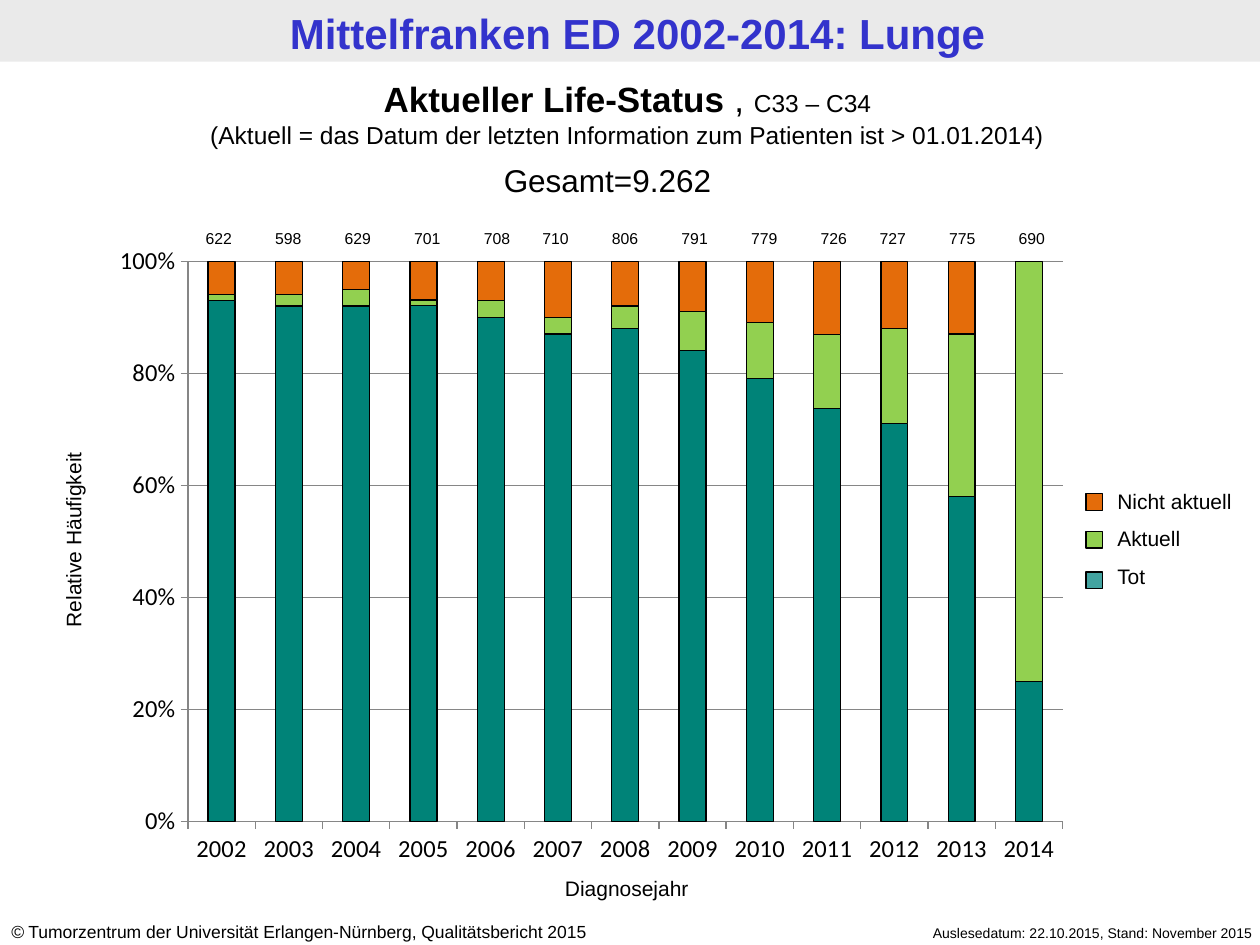
"""Builds the slide on the current life status of lung cancer patients by diagnosis year."""
from lxml import etree
from pptx import Presentation
from pptx.chart.data import CategoryChartData
from pptx.dml.color import RGBColor
from pptx.enum.chart import XL_CHART_TYPE, XL_TICK_MARK
from pptx.enum.shapes import MSO_SHAPE
from pptx.enum.text import MSO_ANCHOR, PP_ALIGN
from pptx.oxml import parse_xml
from pptx.oxml.ns import nsdecls, qn
from pptx.util import Pt

BLACK = RGBColor(0x00, 0x00, 0x00)
BAND_GREY = RGBColor(0xEA, 0xEA, 0xEA)
LINE_GREY = RGBColor(0x86, 0x86, 0x86)
TITLE_BLUE = RGBColor(0x33, 0x33, 0xCC)
ORANGE = RGBColor(0xE4, 0x6C, 0x0A)
GREEN = RGBColor(0x92, 0xD0, 0x50)
TEAL = RGBColor(0x00, 0x83, 0x78)
LEGEND_TEAL = RGBColor(0x00, 0x83, 0x80)

prs = Presentation()
prs.slide_width, prs.slide_height = Pt(720), Pt(540)
slide = prs.slides.add_slide(prs.slide_layouts[5])


def add_text(left, top, width, height, paragraphs, size, align=PP_ALIGN.LEFT, gap=0):
    box = slide.shapes.add_textbox(Pt(left), Pt(top), Pt(width), Pt(height))
    frame = box.text_frame
    frame.word_wrap = True
    for index, text in enumerate(paragraphs):
        paragraph = frame.paragraphs[0] if index == 0 else frame.add_paragraph()
        paragraph.text = text
        paragraph.alignment = align
        if index and gap:
            paragraph.space_before = Pt(gap)
        paragraph.font.name = "Arial"
        paragraph.font.size = Pt(size)
        paragraph.font.color.rgb = BLACK
    return box


def add_box(left, top, width, height, color):
    box = slide.shapes.add_shape(MSO_SHAPE.RECTANGLE, Pt(left), Pt(top), Pt(width), Pt(height))
    box.shadow.inherit = False
    box.fill.solid()
    box.fill.fore_color.rgb = color
    return box


band = add_box(0, 0, 720, 35.3, BAND_GREY)
band.line.fill.background()
slide.shapes._spTree.insert(2, band._element)

title = slide.shapes.title
title.left, title.top, title.width, title.height = Pt(4.3), Pt(1), Pt(720), Pt(35.3)
title.text_frame.text = "Mittelfranken ED 2002-2014: Lunge"
title.text_frame.vertical_anchor = MSO_ANCHOR.TOP
title.text_frame.margin_top = title.text_frame.margin_bottom = Pt(3)
heading = title.text_frame.paragraphs[0]
heading.alignment = PP_ALIGN.CENTER
heading.font.name = "Arial"
heading.font.size = Pt(24)
heading.font.bold = True
heading.font.color.rgb = TITLE_BLUE

add_text(478.8, 524.9, 244.1, 17.3, ["Auslesedatum: 22.10.2015, Stand: November 2015"], 8, PP_ALIGN.RIGHT)
copyright_note = add_text(-0.7, 522.7, 377.3, 19.4, ["©"], 10).text_frame.paragraphs[0]
copyright_note.runs[0].font.italic = True
copyright_note.add_run().text = " Tumorzentrum der Universität Erlangen-Nürnberg, Qualitätsbericht 2015"

status = CategoryChartData(number_format="0")
status.categories = [str(year) for year in range(2002, 2015)]
status.add_series("Tot", [93, 92, 92, 93, 90, 87, 88, 84, 79, 73, 71, 58, 25])
status.add_series("Aktuell", [1, 2, 3, 1, 3, 3, 4, 7, 10, 13, 17, 29, 75])
status.add_series("Nicht aktuell", [6, 6, 5, 7, 7, 10, 8, 9, 11, 13, 12, 13, 0])
chart = slide.shapes.add_chart(
    XL_CHART_TYPE.COLUMN_STACKED_100, Pt(56.9), Pt(134.6), Pt(561.6), Pt(367.9), status
).chart
chart.has_legend = False
chart.has_title = False
chart.font.name = "Calibri"
chart.font.size = Pt(14)
chart.font.color.rgb = BLACK

columns = chart.plots[0]
columns.gap_width = 150
columns.overlap = 100
columns.vary_by_categories = False
for series, color in zip(columns.series, (TEAL, GREEN, ORANGE)):
    series.format.fill.solid()
    series.format.fill.fore_color.rgb = color
    series.format.line.color.rgb = BLACK
    series.format.line.width = Pt(0.75)

shares = chart.value_axis
shares.minimum_scale, shares.maximum_scale, shares.major_unit = 0, 1, 0.2
shares.tick_labels.number_format = "0%"
shares.tick_labels.number_format_is_linked = False
shares.has_major_gridlines = True
shares.major_gridlines.format.line.color.rgb = LINE_GREY
shares.major_gridlines.format.line.width = Pt(0.75)
for axis in (shares, chart.category_axis):
    axis.major_tick_mark = XL_TICK_MARK.OUTSIDE
    axis.format.line.color.rgb = LINE_GREY
    axis.format.line.width = Pt(0.75)
    axis.tick_labels.font.size = Pt(14)

plot_area = chart._chartSpace.chart.plotArea
for automatic in plot_area.findall(qn("c:layout")):
    plot_area.remove(automatic)
plot_area.insert(0, parse_xml(
    f'<c:layout {nsdecls("c")}><c:manualLayout><c:layoutTarget val="inner"/>'
    '<c:xMode val="edge"/><c:yMode val="edge"/><c:x val="0.09"/><c:y val="0.04"/>'
    '<c:w val="0.89"/><c:h val="0.87"/></c:manualLayout></c:layout>'))

frequency = add_text(-44.6, 297.4, 173.5, 22.3, ["Relative Häufigkeit"], 12, PP_ALIGN.CENTER)
frequency.rotation = 270
add_text(277.2, 496.8, 162, 22.3, ["Diagnosejahr"], 12, PP_ALIGN.CENTER)

case_counts = {
    105.1: (622, 598, 629, 701, 708),
    297.6: (710, 806, 791, 779, 726),
    490.3: (727, 775, 690),
}
for start, counts in case_counts.items():
    for position, count in enumerate(counts):
        add_text(start + 39.75 * position, 127.3, 39.75, 18, [str(count)], 9, PP_ALIGN.CENTER)

subtitle = add_text(-2.9, 41, 722.9, 48.2, [
    "Aktueller Life-Status ",
    "(Aktuell = das Datum der letzten Information zum Patienten ist > 01.01.2014)",
], 14, PP_ALIGN.CENTER).text_frame.paragraphs[0]
subtitle.add_run().text = ", "
subtitle.add_run().text = "C33 – C34"
subtitle.runs[0].font.bold = True
for run in subtitle.runs[:2]:
    run.font.size = Pt(20)

add_text(280.8, 88.6, 158.4, 28.8, ["Gesamt=9.262"], 18)

add_text(631.4, 275.8, 88.6, 65.5, ["Nicht aktuell", "Aktuell", "Tot"], 12, gap=6.8)
for top, color in ((282.2, ORANGE), (303.8, GREEN), (326.9, LEGEND_TEAL)):
    swatch = add_box(620.6, top, 9.4, 9.4, color)
    swatch.line.color.rgb = BLACK
    swatch.line.width = Pt(0.75)
    if color == LEGEND_TEAL:
        tint = swatch._element.spPr.find(qn("a:solidFill"))[0]
        etree.SubElement(tint, qn("a:alpha")).set("val", "74000")

prs.save("out.pptx")
